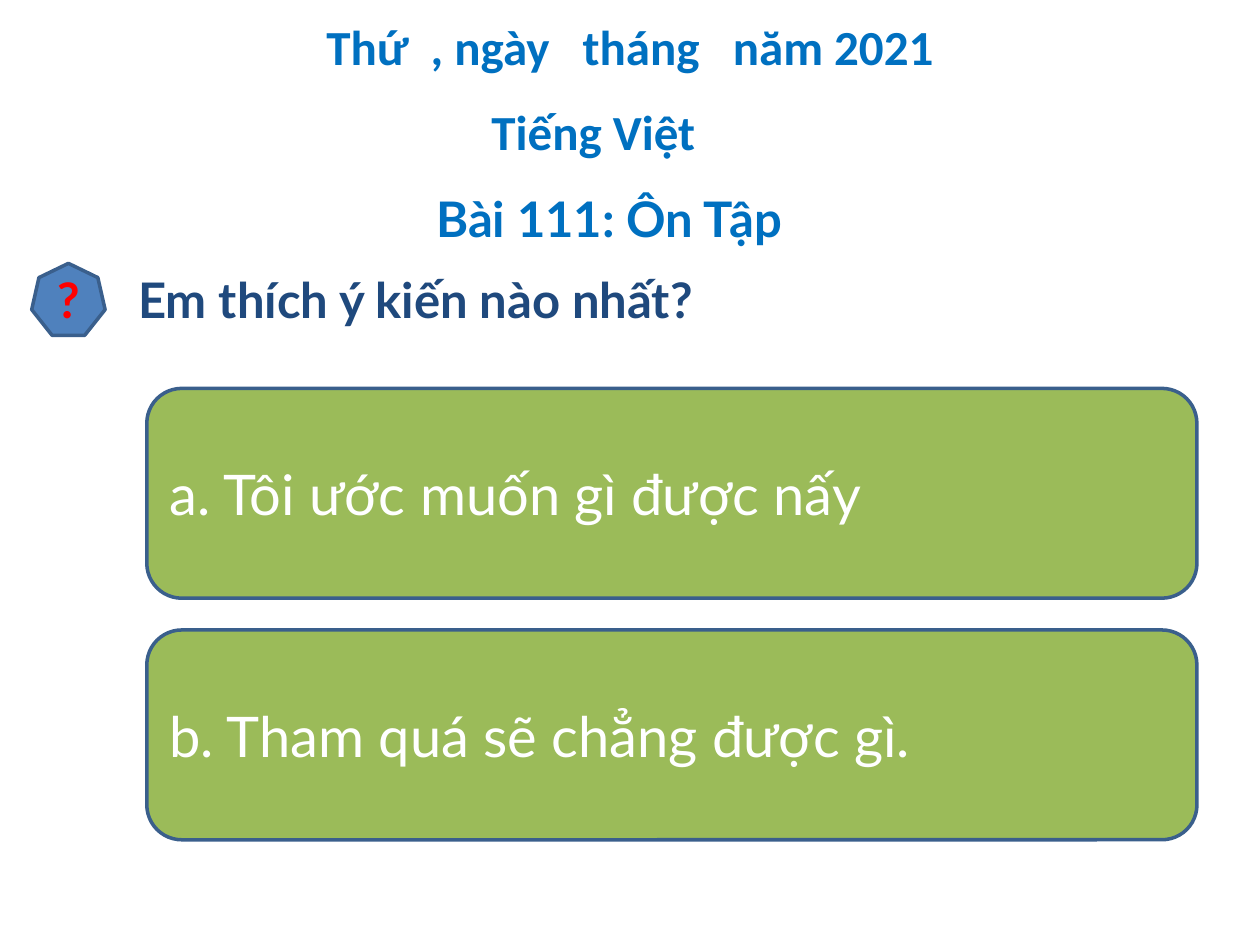
from pptx import Presentation
from pptx.dml.color import RGBColor
from pptx.enum import shapes, text
from pptx.util import Cm, Pt

BLUE, NAVY, RED, WHITE = "0070C0", "1F497D", "FF0000", "FFFFFF"
BADGE, GREEN, EDGE = "4F81BD", "9BBB59", "3A5F8C"
LEFT, MID = text.PP_ALIGN.LEFT, text.PP_ALIGN.CENTER
KIND = shapes.MSO_SHAPE

# Text, font, colour, alignment, then left, top and width in cm
TITLE = ("Bài 111: Ôn Tập", "Lato", BLUE, MID, 7.2, 3.66, 10.16)
LINES = [
    ("Thứ  , ngày   tháng   năm 2021", "Calibri", BLUE, MID, 0.42, 0.21, 24.55),
    ("Tiếng Việt", "Calibri", BLUE, MID, 8.68, 1.93, 6.56),
    ("Em thích ý kiến nào nhất?", "Lato", NAVY, LEFT, 2.54, 5.31, 14.6),
]
CHOICES = ["a. Tôi ước muốn gì được nấy", "b. Tham quá sẽ chẳng được gì."]
LINE_H = 1.45
TOP, HIGH, GAP = 7.83, 4.23, 0.64


def color(code):
    return RGBColor.from_string(code)


def write(shape, words, face, ink, align, size=28, bold=True):
    frame = shape.text_frame
    frame.word_wrap = True
    frame.text = words
    par = frame.paragraphs[0]
    par.alignment = align
    font = par.font
    font.name, font.size, font.bold = face, Pt(size), bold
    font.color.rgb = color(ink)


def add_box(slide, kind, fill, *place):
    box = slide.shapes.add_shape(kind, *map(Cm, place))
    box.shadow.inherit = False
    box.fill.solid()
    box.fill.fore_color.rgb = color(fill)
    box.line.color.rgb = color(EDGE)
    box.line.width = Pt(2)
    box.text_frame.vertical_anchor = text.MSO_ANCHOR.MIDDLE
    return box


def main():
    deck = Presentation()
    deck.slide_width, deck.slide_height = Cm(25.4), Cm(19.05)
    slide = deck.slides.add_slide(deck.slide_layouts[5])

    *style, left, top, width = TITLE
    head = slide.shapes.title
    head.left, head.top = Cm(left), Cm(top)
    head.width, head.height = Cm(width), Cm(LINE_H)
    write(head, *style)

    for *style, left, top, width in LINES:
        box = slide.shapes.add_textbox(*map(Cm, (left, top, width, LINE_H)))
        write(box, *style)

    badge = add_box(slide, KIND.HEPTAGON, BADGE, 0.64, 5.31, 1.48, LINE_H)
    write(badge, "?", "Lato", RED, MID)

    for i, words in enumerate(CHOICES):
        top = TOP + i * (HIGH + GAP)
        box = add_box(slide, KIND.ROUNDED_RECTANGLE, GREEN, 2.96, top, 21.17, HIGH)
        write(box, words, "Lato", WHITE, LEFT, 32, False)

    deck.save("out.pptx")


if __name__ == "__main__":
    main()
